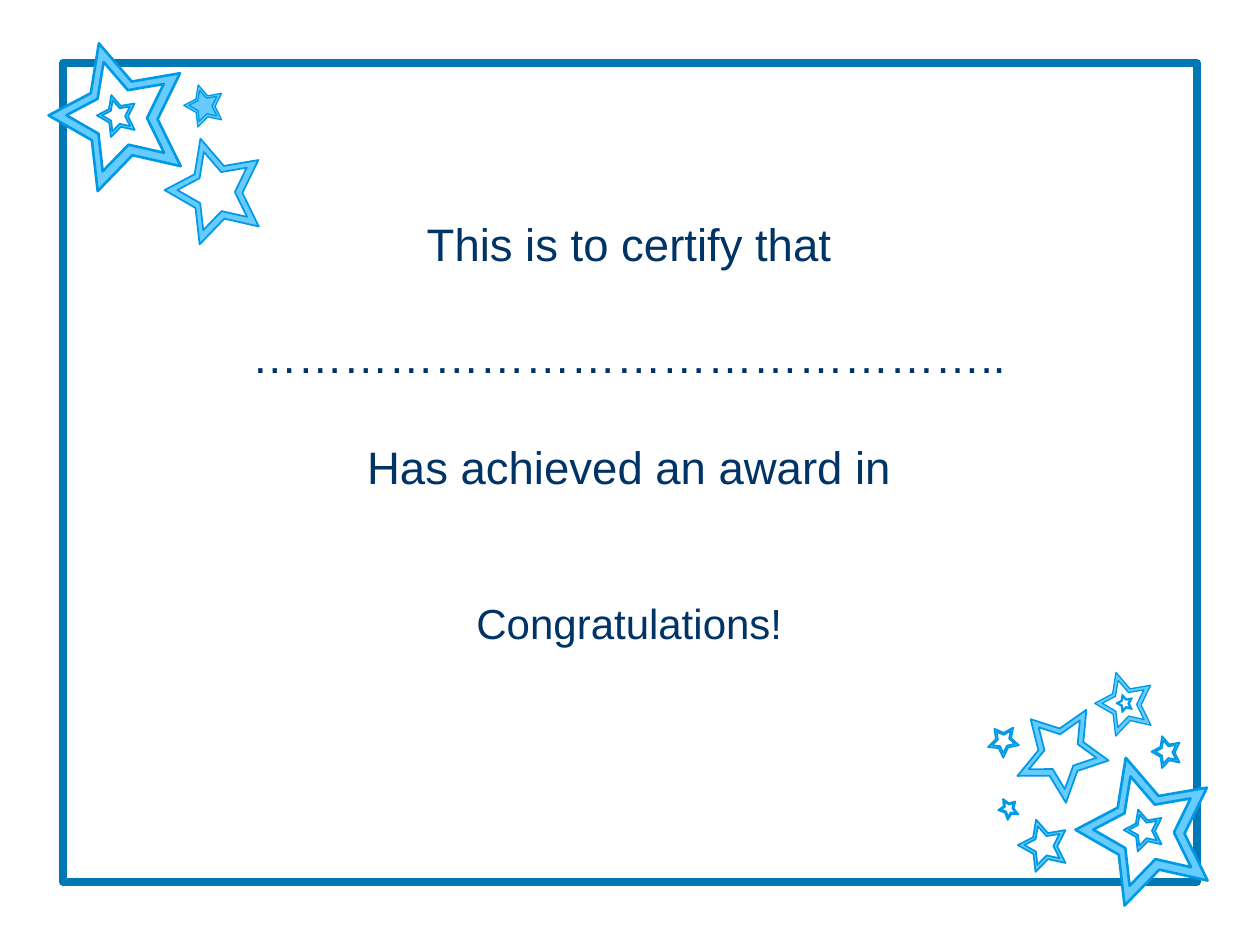
from pptx import Presentation
from pptx.dml.color import RGBColor
from pptx.enum.shapes import MSO_SHAPE
from pptx.enum.text import MSO_ANCHOR, PP_ALIGN
from pptx.util import Inches, Pt

WHITE = RGBColor(0xFF, 0xFF, 0xFF)
FRAME_BLUE = RGBColor(0x00, 0x78, 0xB4)
STAR_FILL = RGBColor(0x66, 0xCC, 0xFF)
STAR_LINE = RGBColor(0x00, 0x99, 0xE6)
NAVY = RGBColor(0x00, 0x33, 0x66)

# text, size, space before (points)
LINES = [
    ("This is to certify that", 26, 0),
    ("…………………………………………..", 26, 32.4),
    ("Has achieved an award in", 26, 32.4),
    ("Congratulations!", 24, 59.3),
]

# Corners of the star as fractions of its width and height
STAR = [(1, 0.28), (0.64, 0.29), (0.44, 0), (0.33, 0.33), (0, 0.44),
        (0.29, 0.65), (0.28, 1), (0.57, 0.79), (0.91, 0.91), (0.79, 0.57)]
INNER_SCALE, INNER_OFFSET = 0.74, 0.13
TILT = 352

# Each cluster: rotation, then stars as (left, top, width, height, line width, inner fill)
CLUSTERS = [
    (TILT, [(1.31, 1.09, 0.77, 0.83, 1, WHITE)]),
    (TILT, [(1.46, 0.67, 0.31, 0.33, 0.75, STAR_FILL)]),
    (TILT, [(0.39, 0.33, 1.08, 1.16, 1.5, WHITE), (0.77, 0.75, 0.31, 0.33, 1, WHITE)]),
    (TILT, [(8.54, 6, 1.08, 1.16, 1.5, WHITE), (8.92, 6.42, 0.31, 0.33, 1, WHITE)]),
    (TILT, [(8.69, 5.33, 0.46, 0.5, 0.75, WHITE), (8.86, 5.51, 0.13, 0.14, 0.75, WHITE)]),
    (37.8, [(8.08, 5.58, 0.69, 0.75, 1, WHITE)]),
    (TILT, [(8.08, 6.5, 0.39, 0.41, 1, WHITE)]),
    (TILT, [(9.14, 5.84, 0.23, 0.25, 1, WHITE)]),
    (52.9, [(7.92, 6.34, 0.17, 0.15, 1, WHITE)]),
    (43.8, [(7.85, 5.75, 0.23, 0.25, 1, WHITE)]),
]


def style(shape, fill, line, line_width):
    shape.shadow.inherit = False
    shape.fill.solid()
    shape.fill.fore_color.rgb = fill
    shape.line.color.rgb = line
    shape.line.width = Pt(line_width)


def add_star(shapes, left, top, width, height, rotation, fill, line_width):
    corners = [(Inches(left + x * width), Inches(top + y * height)) for x, y in STAR]
    builder = shapes.build_freeform(*corners[0])
    builder.add_line_segments(corners[1:], close=True)
    star = builder.convert_to_shape()
    style(star, fill, STAR_LINE, line_width)
    star.rotation = rotation


def add_cluster(slide, rotation, stars):
    """Group the stars, each an outer outline with a smaller one inside."""
    shapes = slide.shapes.add_group_shape().shapes
    for left, top, width, height, line_width, inner_fill in stars:
        add_star(shapes, left, top, width, height, rotation, STAR_FILL, line_width)
        add_star(shapes, left + INNER_OFFSET * width, top + INNER_OFFSET * height,
                 INNER_SCALE * width, INNER_SCALE * height,
                 rotation, inner_fill, line_width)


def add_wording(slide):
    box = slide.shapes.add_textbox(Inches(0.61), Inches(1.72), Inches(8.77), Inches(3.47))
    frame = box.text_frame
    frame.word_wrap = True
    frame.vertical_anchor = MSO_ANCHOR.BOTTOM
    for index, (text, size, space_before) in enumerate(LINES):
        paragraph = frame.add_paragraph() if index else frame.paragraphs[0]
        paragraph.text = text
        paragraph.alignment = PP_ALIGN.CENTER
        paragraph.space_before = Pt(space_before)
        paragraph.font.name = "Arial"
        paragraph.font.size = Pt(size)
        paragraph.font.color.rgb = NAVY


def main():
    presentation = Presentation()
    presentation.slide_width = Inches(10)
    presentation.slide_height = Inches(7.5)
    slide = presentation.slides.add_slide(presentation.slide_layouts[6])

    border = slide.shapes.add_shape(MSO_SHAPE.RECTANGLE, Inches(0.5), Inches(0.5),
                                    Inches(9), Inches(6.5))
    style(border, WHITE, FRAME_BLUE, 4.5)
    add_wording(slide)
    for rotation, stars in CLUSTERS:
        add_cluster(slide, rotation, stars)

    presentation.save("out.pptx")


if __name__ == "__main__":
    main()
